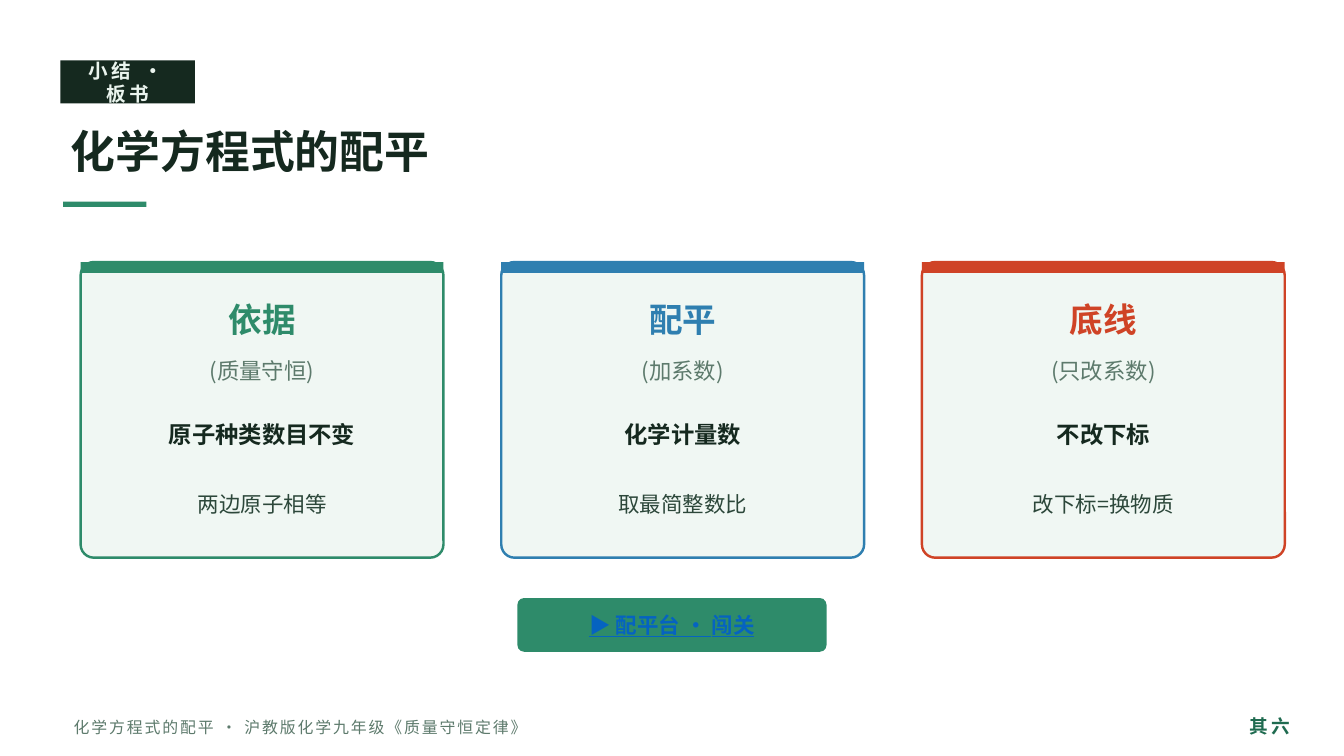
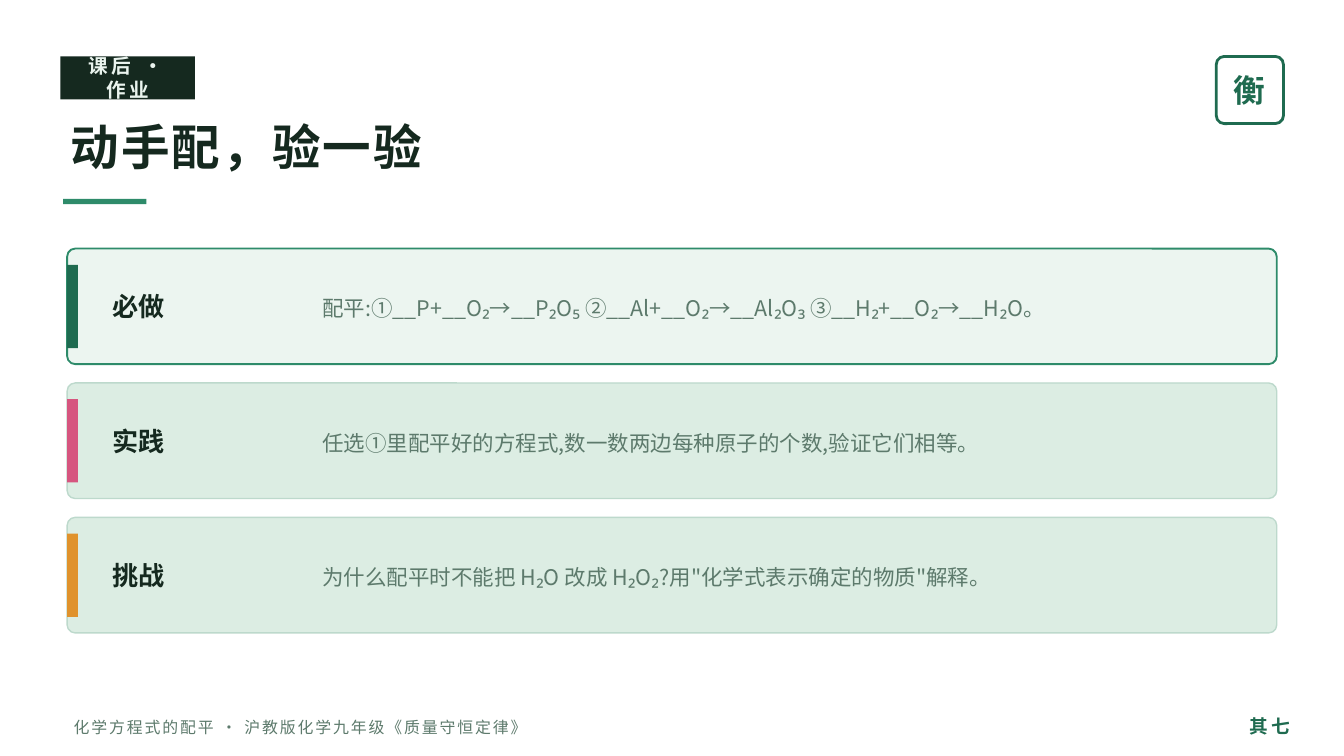
from pptx import Presentation
from pptx.dml.color import RGBColor
from pptx.enum.shapes import MSO_SHAPE
from pptx.enum.text import MSO_ANCHOR, PP_ALIGN
from pptx.oxml.ns import qn
from pptx.util import Emu, Pt
from lxml.etree import SubElement

# Scale: 100 px to the inch
PX = 9144
PAGE_WIDTH = 1000

FONT = "Noto Sans CJK SC"
INK = RGBColor(0x15, 0x29, 0x1F)
BODY = RGBColor(0x2C, 0x47, 0x3A)
MUTED = RGBColor(0x5D, 0x7A, 0x6C)
GREEN = RGBColor(0x2E, 0x8B, 0x6A)
DEEP_GREEN = RGBColor(0x1F, 0x6B, 0x50)
BLUE = RGBColor(0x2F, 0x7F, 0xB0)
RED = RGBColor(0xCF, 0x43, 0x26)
PINK = RGBColor(0xD6, 0x55, 0x7F)
ORANGE = RGBColor(0xE0, 0x92, 0x2C)
LINK_BLUE = RGBColor(0x05, 0x63, 0xC1)
TAG_TEXT = RGBColor(0xEA, 0xF4, 0xEE)
CARD_FILL = RGBColor(0xF0, 0xF7, 0xF3)
MUST_FILL = RGBColor(0xEC, 0xF5, 0xF0)
TASK_FILL = RGBColor(0xDC, 0xED, 0xE3)
TASK_LINE = RGBColor(0xBD, 0xD9, 0xCC)

# Text formats
TAG = dict(size=Pt(10.5), bold=True, color=TAG_TEXT)
TITLE = dict(size=Pt(24), bold=True, color=INK)
WIDE_TITLE = dict(size=Pt(26), bold=True, color=INK)
CARD_HEAD = dict(size=Pt(18), bold=True)
CARD_NOTE = dict(size=Pt(12), color=MUTED)
CARD_POINT = dict(size=Pt(12.5), bold=True, color=INK)
CARD_DETAIL = dict(size=Pt(11.5), color=BODY)
BUTTON = dict(size=Pt(11.5), bold=True, underline=True, color=LINK_BLUE)
SEAL = dict(size=Pt(17), bold=True, color=DEEP_GREEN)
TASK_NAME = dict(size=Pt(14), bold=True, color=INK)
TASK_TEXT = dict(size=Pt(11.5), color=MUTED)
FOOTER = dict(size=Pt(8.5), color=MUTED)
PAGE_MARK = dict(size=Pt(10), bold=True, color=DEEP_GREEN)

FOOTER_TEXT = "化学方程式的配平 · 沪教版化学九年级《质量守恒定律》"

CARDS = [
    (GREEN, "依据", "(质量守恒)", "原子种类数目不变", "两边原子相等"),
    (BLUE, "配平", "(加系数)", "化学计量数", "取最简整数比"),
    (RED, "底线", "(只改系数)", "不改下标", "改下标=换物质"),
]
TASKS = [
    (DEEP_GREEN, MUST_FILL, GREEN, 1, "必做",
     "配平:①__P+__O₂→__P₂O₅ ②__Al+__O₂→__Al₂O₃ ③__H₂+__O₂→__H₂O。"),
    (PINK, TASK_FILL, TASK_LINE, 0.75, "实践",
     "任选①里配平好的方程式,数一数两边每种原子的个数,验证它们相等。"),
    (ORANGE, TASK_FILL, TASK_LINE, 0.75, "挑战",
     "为什么配平时不能把 H₂O 改成 H₂O₂?用\"化学式表示确定的物质\"解释。"),
]


def place(*lengths):
    return [Emu(length * PX) for length in lengths]


def write(box, text, style, align=PP_ALIGN.LEFT, spacing=0, leading=None):
    """Put one formatted line of text into a shape or text box."""
    frame = box.text_frame
    frame.word_wrap = True
    frame.vertical_anchor = MSO_ANCHOR.MIDDLE
    para = frame.paragraphs[0]
    para.alignment = align
    if leading:
        para.line_spacing = Pt(leading)
    span = para.add_run()
    span.text = text
    span.font.name = FONT
    for name, value in style.items():
        if name == "color":
            span.font.color.rgb = value
        else:
            setattr(span.font, name, value)
    props = span._r.get_or_add_rPr()
    SubElement(props, qn("a:ea")).set("typeface", FONT)
    if spacing:
        props.set("spc", str(spacing * 100))


def add_text(page, at, text, style, **options):
    write(page.shapes.add_textbox(*place(*at)), text, style, **options)


def add_block(page, at, fill=None, line=None, weight=1, radius=None):
    """Draw a rectangle, rounded when a radius ratio is given."""
    kind = MSO_SHAPE.RECTANGLE if radius is None else MSO_SHAPE.ROUNDED_RECTANGLE
    block = page.shapes.add_shape(kind, *place(*at))
    block.shadow.inherit = False
    if radius is not None:
        block.adjustments[0] = radius
    if fill is None:
        block.fill.background()
    else:
        block.fill.solid()
        block.fill.fore_color.rgb = fill
    if line is None:
        block.line.fill.background()
    else:
        block.line.color.rgb = line
        block.line.width = Pt(weight)
    return block


def add_header(page, top, tag, title, title_height, rule_top, style, spacing=0):
    add_block(page, (45, top, 100, 32), INK)
    add_text(page, (45, top - 1, 100, 34), tag, TAG,
             align=PP_ALIGN.CENTER, spacing=2)
    add_text(page, (43, rule_top - 8 - title_height, 900, title_height),
             title, style, spacing=spacing)
    add_block(page, (47, rule_top, 62, 4), GREEN)


def add_footer(page, mark):
    add_text(page, (45, 526, 680, 30), FOOTER_TEXT, FOOTER, spacing=1)
    add_text(page, (910, 524, 60, 32), mark, PAGE_MARK, align=PP_ALIGN.RIGHT)


def add_card(page, left, accent, head, note, point, detail):
    add_block(page, (left, 195, 270, 220), CARD_FILL, accent, 1.3, radius=0.045)
    add_block(page, (left, 195, 270, 8), accent)
    rows = [
        (215, 45, head, CARD_HEAD | {"color": accent}),
        (260, 32, note, CARD_NOTE),
        (305, 36, point, CARD_POINT),
        (350, 50, detail, CARD_DETAIL),
    ]
    for top, height, text, style in rows:
        add_text(page, (left, top, 270, height), text, style,
                 align=PP_ALIGN.CENTER)


def add_task(page, top, accent, fill, line, weight, name, text):
    add_block(page, (50, top, 900, 86), fill, line, weight, radius=0.07)
    add_block(page, (50, top + 12, 8, 62), accent)
    add_text(page, (74, top + 10, 140, 66), name, TASK_NAME)
    add_text(page, (230, top + 8, 700, 70), text, TASK_TEXT, leading=16)


def build_summary(page):
    add_header(page, 45, "小结 · 板书", "化学方程式的配平", 60, 150, TITLE)
    for index, card in enumerate(CARDS):
        add_card(page, 60 + 313 * index, *card)
    button = add_block(page, (385, 445, 230, 40), GREEN, radius=0.125)
    write(button, "▶ 配平台 · 闯关", BUTTON, align=PP_ALIGN.CENTER)
    add_footer(page, "其 六")


def build_homework(page):
    add_header(page, 42, "课后 · 作业", "动手配，验一验", 62, 148, WIDE_TITLE,
               spacing=1)
    # Seal in the corner
    add_block(page, (905, 42, 50, 50), None, DEEP_GREEN, 1.5, radius=0.12)
    add_text(page, (905, 41, 50, 52), "衡", SEAL, align=PP_ALIGN.CENTER)
    for index, task in enumerate(TASKS):
        add_task(page, 185 + 100 * index, *task)
    add_footer(page, "其 七")


def main():
    deck = Presentation()
    # Widescreen page, 16 to 9
    deck.slide_width = Emu(PAGE_WIDTH * PX)
    deck.slide_height = Emu(PAGE_WIDTH * PX * 9 // 16)
    for build in (build_summary, build_homework):
        build(deck.slides.add_slide(deck.slide_layouts[6]))
    deck.save("out.pptx")


if __name__ == "__main__":
    main()
